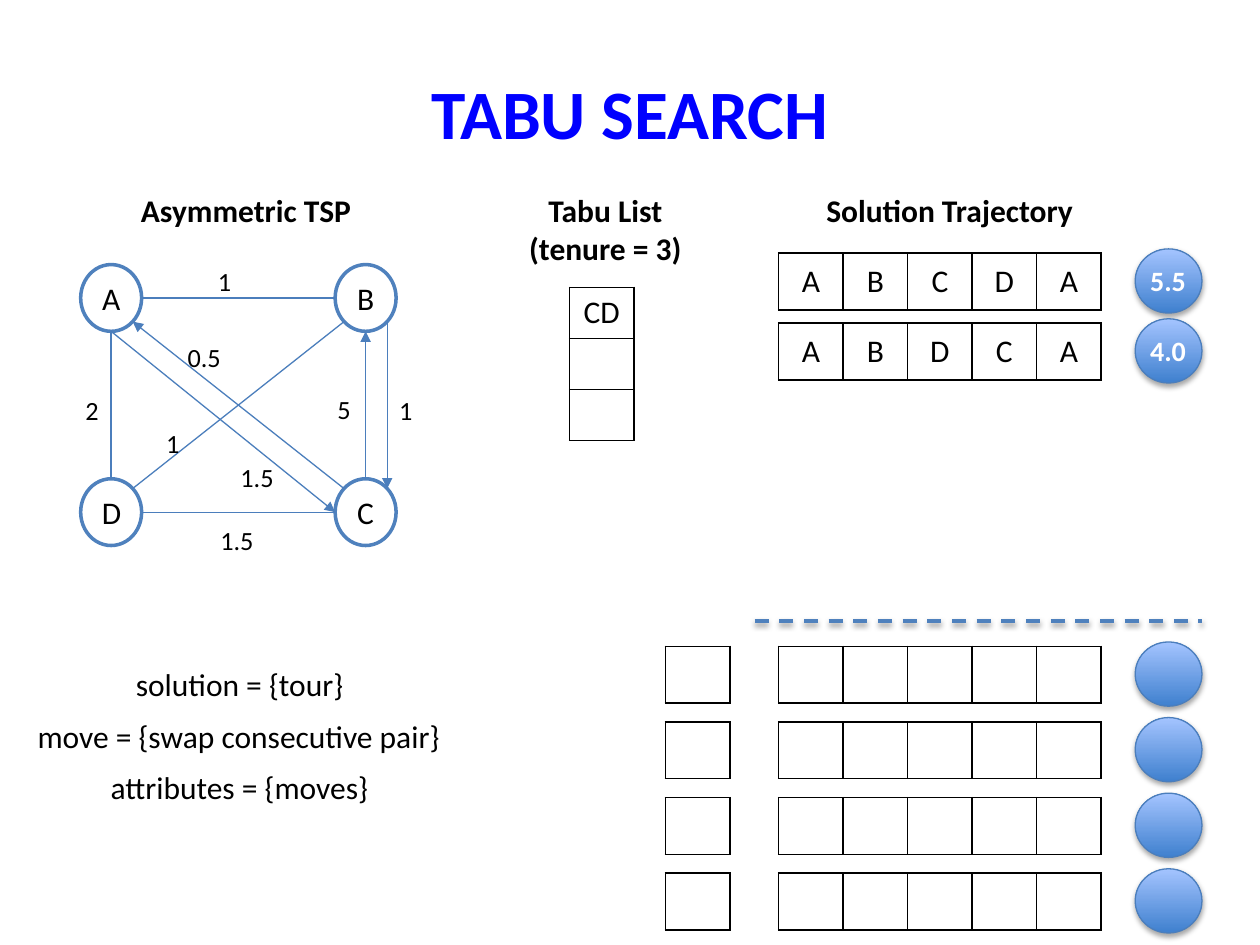
from dataclasses import dataclass
from math import cos, radians, sin

from lxml import etree
from pptx import Presentation
from pptx import util as u
from pptx.dml.color import RGBColor
from pptx.enum import dml, shapes, text
from pptx.oxml import parse_xml
from pptx.oxml.ns import qn

# Grid of 100 columns by 75 rows of square cells
COLS, ROWS = 100, 75
CELL = u.Inches(0.1)
BLACK, WHITE, BLUE, EDGE = "000000", "FFFFFF", "4F81BD", "4B7EBC"
NS = "http://schemas.openxmlformats.org/drawingml/2006/main"
STEP, HIGH = 5.12, 4.5  # width and height of a tour cell
TOUR, MOVE, DISK = 61.8, 52.8, 90.1  # left columns of the solution rows


@dataclass
class Node:
    name: str
    col: float
    row: float
    wide: float = 4.84
    high: float = 5.3

    def site(self, angle: float | None) -> tuple[float, float]:
        """Point on the rim, clockwise from the right."""
        turn = radians(angle)
        return (self.col + self.wide / 2 * (1 + cos(turn)),
                self.row + self.high / 2 * (1 + sin(turn)))


@dataclass
class Edge:
    tail: str
    leave: float
    head: str
    reach: float
    arrow: bool = False


@dataclass
class Label:
    words: str
    col: float
    row: float
    wide: float
    high: float = 4
    size: float = 18
    bold: bool = False
    color: str = BLACK
    align: str = "LEFT"
    wrap: bool = True


NODES = {n.name: n for n in (Node("A", 6.4, 21), Node("B", 26.6, 21),
                             Node("D", 6.4, 38), Node("C", 26.6, 38))}
RIGHT, LOWER_R, DOWN, LOWER_L, LEFT, UPPER_L, UP, UPPER_R = range(0, 360, 45)
EDGES = [
    Edge("A", DOWN, "C", LEFT, True), Edge("C", UPPER_L, "A", LOWER_R, True),
    Edge("A", DOWN, "D", UP), Edge("D", RIGHT, "C", LEFT),
    Edge("B", LOWER_L, "D", UPPER_R), Edge("A", RIGHT, "B", LEFT),
    Edge("B", LOWER_R, "C", UPPER_R, True), Edge("C", UP, "B", DOWN, True),
]
COSTS = [("1", 16.3, 20.6, 2.9), ("1", 12.2, 33.4, 2.9), ("1", 30.7, 30.8, 2.9),
         ("2", 5.8, 30.8, 2.9), ("1.5", 16.5, 41.1, 4.8), ("5", 25.8, 30.7, 2.9),
         ("0.5", 13.9, 26.6, 4.8), ("1.5", 18.1, 36.1, 6.1)]
LABELS = [
    Label("Asymmetric TSP", 10.2, 14.7, 20.2, bold=True),
    Label("Tabu List\n(tenure = 3)", 40.8, 14.7, 14.5, 7.1, bold=True, align="CENTER"),
    Label("Solution Trajectory", 64.6, 14.7, 22.7, bold=True),
    Label("solution = {tour}", 9.8, 52.3, 18.7, wrap=False),
    Label("move = {swap consecutive pair}", 2, 56.4, 34.3, wrap=False),
    Label("attributes = {moves}", 7.8, 60.5, 22.7, wrap=False),
]
TRAIL = [("ABCDA", "5.5"), ("ABDCA", "4.0")]


def span(*cells: float) -> list[int]:
    return [u.Emu(round(c * CELL)) for c in cells]


def rgb(code: str) -> RGBColor:
    return RGBColor.from_string(code)


def style(frame, size: float, color: str, bold: bool, align: str) -> None:
    for para in frame.paragraphs:
        para.alignment = text.PP_ALIGN[align]
        for run in para.runs:
            font = run.font
            font.name, font.size, font.bold = "Calibri", u.Pt(size), bold
            font.color.rgb = rgb(color)


def write(slide, item: Label):
    box = slide.shapes.add_textbox(*span(item.col, item.row, item.wide, item.high))
    frame = box.text_frame
    frame.text = item.words
    frame.word_wrap = item.wrap
    frame.auto_size = text.MSO_AUTO_SIZE.SHAPE_TO_FIT_TEXT
    style(frame, item.size, item.color, item.bold, item.align)
    return frame


def shade(shape, blur: float, drop: float, alpha: int) -> None:
    for old in shape._element.spPr.findall(qn("a:effectLst")):
        shape._element.spPr.remove(old)
    shape._element.spPr.append(parse_xml(
        f'<a:effectLst xmlns:a="{NS}"><a:outerShdw blurRad="{u.Pt(blur)}" '
        f'dist="{u.Pt(drop)}" dir="5400000" rotWithShape="0"><a:srgbClr val="{BLACK}">'
        f'<a:alpha val="{alpha * 1000}"/></a:srgbClr></a:outerShdw></a:effectLst>'))


def oval(slide, col: float, row: float, wide: float, high: float, line: str, width: float):
    shape = slide.shapes.add_shape(shapes.MSO_SHAPE.OVAL, *span(col, row, wide, high))
    shape.shadow.inherit = False
    shape.line.color.rgb, shape.line.width = rgb(line), u.Pt(width)
    return shape


def disk(slide, row: float, score: str = "") -> None:
    shape = oval(slide, DISK, row - 0.35, 5.3, 5.1, EDGE, 0.75)
    shape.fill.gradient()
    shape.fill.gradient_angle = 90
    for stop, place, code in zip(shape.fill.gradient_stops, (0, 1), ("3F80CE", "A4C4FF")):
        stop.position, stop.color.rgb = place, rgb(code)
    shade(shape, 3.1, 1.8, 35)
    if score:
        write(slide, Label(score, DISK + 0.2, row + 0.35, 4.9, 3.7, 16, True,
                           WHITE, wrap=False))


def line(slide, start, end, color: str, width: float, arrow: bool = False):
    link = slide.shapes.add_connector(shapes.MSO_CONNECTOR.STRAIGHT, *span(*start, *end))
    link.line.color.rgb, link.line.width = rgb(color), u.Pt(width)
    if arrow:
        etree.SubElement(link.line._get_or_add_ln(), qn("a:tailEnd"), type="triangle")
    etree.SubElement(link._element.spPr, qn("a:effectLst"))
    return link


def grid(slide, col: float, row: float, rows: list[str], high: float = HIGH,
         anchor: str = "MIDDLE") -> None:
    """Ruled table with one letter group per cell."""
    wide = len(rows[0])
    frame = slide.shapes.add_table(len(rows), wide, *span(
        col, row, STEP * wide, high * len(rows)))
    table = frame.table
    table.first_row = table.horz_banding = False
    for r, words in enumerate(rows):
        table.rows[r].height = span(high)[0]
        for c, word in enumerate(words):
            table.columns[c].width = span(STEP)[0]
            cell = table.cell(r, c)
            cell.text = word
            cell.vertical_anchor = text.MSO_ANCHOR[anchor]
            style(cell.text_frame, 18, BLACK, False, "CENTER")
            props = cell._tc.get_or_add_tcPr()
            for side in ("lnL", "lnR", "lnT", "lnB"):
                props.append(parse_xml(
                    f'<a:{side} xmlns:a="{NS}" w="{u.Pt(1)}"><a:solidFill>'
                    f'<a:srgbClr val="{BLACK}"/></a:solidFill></a:{side}>'))
            cell.fill.background()


def main() -> None:
    deck = Presentation()
    deck.slide_width, deck.slide_height = span(COLS, ROWS)
    slide = deck.slides.add_slide(deck.slide_layouts[6])

    # Title and captions
    title = write(slide, Label("TABU SEARCH", 5, 5, 90, 7.8, 39.6, True, "0000FF", "CENTER"))
    title.auto_size = text.MSO_AUTO_SIZE.NONE
    title.vertical_anchor = text.MSO_ANCHOR.MIDDLE
    for item in LABELS:
        write(slide, item)

    # Tabu list and solutions visited
    grid(slide, 45.2, 22.8, [["CD"], [""], [""]], 4.06, "TOP")
    for i, (tour, score) in enumerate(TRAIL):
        row = 20.1 + 5.55 * i
        grid(slide, TOUR, row, [list(tour)])
        disk(slide, row, score)

    # Empty candidates below the dashed rule
    rule = line(slide, (59.9, 49.3), (95.4, 49.3), BLUE, 2)
    rule.line.dash_style = dml.MSO_LINE.DASH
    shade(rule, 3.1, 1.6, 38)
    for i in range(4):
        row = 51.3 + 6 * i
        grid(slide, MOVE, row, [[""]])
        grid(slide, TOUR, row, [[""] * 5])
        disk(slide, row)

    # Cost graph
    for node in NODES.values():
        shape = oval(slide, node.col, node.row, node.wide, node.high, BLUE, 2)
        shape.fill.solid()
        shape.fill.fore_color.rgb = rgb(WHITE)
        frame = shape.text_frame
        frame.text = node.name
        frame.vertical_anchor = text.MSO_ANCHOR.MIDDLE
        style(frame, 18, BLACK, False, "CENTER")
    for edge in EDGES:
        line(slide, NODES[edge.tail].site(edge.leave), NODES[edge.head].site(edge.reach),
             EDGE, 0.75, edge.arrow)
    for cost in COSTS:
        write(slide, Label(*cost, high=3.5, size=15))

    deck.save("out.pptx")


if __name__ == "__main__":
    main()
